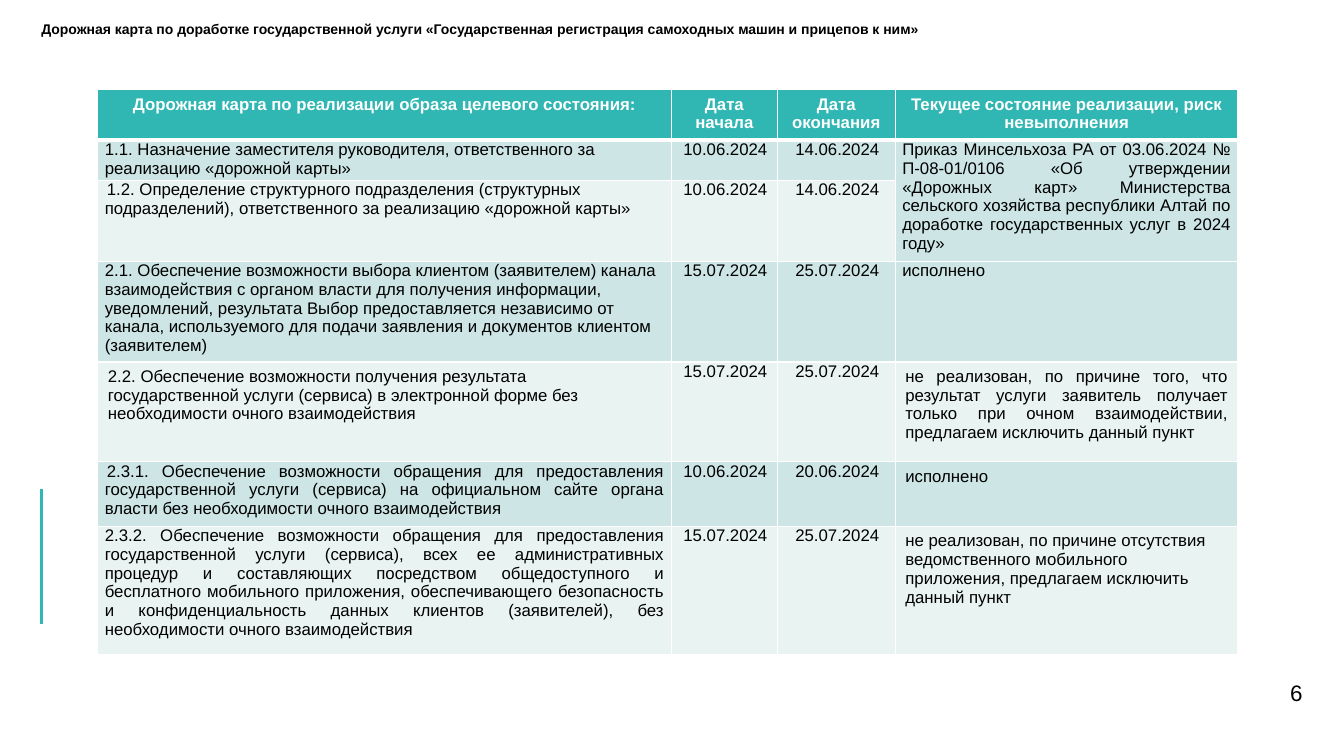
from dataclasses import dataclass

from lxml.etree import SubElement
from pptx import Presentation
from pptx.dml.color import RGBColor
from pptx.enum.shapes import MSO_CONNECTOR
from pptx.enum.text import MSO_ANCHOR, MSO_AUTO_SIZE, PP_ALIGN
from pptx.oxml.ns import qn
from pptx.table import Table, _Cell
from pptx.text.text import TextFrame, _Paragraph
from pptx.util import Inches, Pt

TEAL = RGBColor(0x30, 0xB6, 0xB3)
BAND_DARK = RGBColor(0xCD, 0xE5, 0xE5)
BAND_LIGHT = RGBColor(0xE8, 0xF3, 0xF2)
WHITE = RGBColor(0xFF, 0xFF, 0xFF)
BLACK = RGBColor(0x00, 0x00, 0x00)
FONT = "Arial"

LEFT, CENTER, JUSTIFY = PP_ALIGN.LEFT, PP_ALIGN.CENTER, PP_ALIGN.JUSTIFY
COLUMN_WIDTHS = (5.69, 1.05, 1.17, 3.4)
ROW_HEIGHTS = (0.48, 0.37, 0.74, 0.93, 0.99, 0.64, 1.27)


@dataclass(frozen=True)
class Entry:
    text: str
    align: PP_ALIGN = LEFT
    tight: bool = True  # narrow side margins, none above and below
    indent: float = 0


@dataclass(frozen=True)
class Step:
    task: Entry
    start: str
    finish: str
    status: Entry

    def entries(self) -> list[Entry]:
        dates = [Entry(day, CENTER, indent=0.02) for day in (self.start, self.finish)]
        return [self.task, *dates, self.status]


HEADINGS = [
    Entry(text, CENTER, tight=False)
    for text in (
        "Дорожная карта по реализации образа целевого состояния:",
        "Дата\nначала",
        "Дата окончания",
        "Текущее состояние реализации, риск невыполнения",
    )
]

STEPS = [
    Step(
        Entry("1.1. Назначение заместителя руководителя, ответственного за "
              "реализацию «дорожной карты»"),
        "10.06.2024", "14.06.2024",
        Entry("Приказ Минсельхоза РА от 03.06.2024 № П-08-01/0106 «Об утверждении "
              "«Дорожных карт» Министерства сельского хозяйства республики Алтай "
              "по доработке государственных услуг в 2024 году»", JUSTIFY),
    ),
    Step(
        Entry("1.2. Определение структурного подразделения (структурных "
              "подразделений), ответственного за реализацию «дорожной карты»",
              indent=0.02),
        "10.06.2024", "14.06.2024",
        Entry(""),  # covered by the merged order text above
    ),
    Step(
        Entry("2.1. Обеспечение возможности выбора клиентом (заявителем) канала "
              "взаимодействия с органом власти для получения информации, "
              "уведомлений, результата Выбор предоставляется независимо от канала, "
              "используемого для подачи заявления и документов клиентом (заявителем)"),
        "15.07.2024", "25.07.2024",
        Entry("исполнено", JUSTIFY),
    ),
    Step(
        Entry("2.2. Обеспечение возможности получения результата государственной "
              "услуги (сервиса) в электронной форме без необходимости очного "
              "взаимодействия", tight=False),
        "15.07.2024", "25.07.2024",
        Entry("не реализован, по причине того, что результат услуги заявитель "
              "получает только при очном взаимодействии, предлагаем исключить "
              "данный пункт", JUSTIFY, tight=False),
    ),
    Step(
        Entry("2.3.1. Обеспечение возможности обращения для предоставления "
              "государственной услуги (сервиса) на официальном сайте органа власти "
              "без необходимости очного взаимодействия", JUSTIFY, indent=0.02),
        "10.06.2024", "20.06.2024",
        Entry("исполнено", JUSTIFY, tight=False),
    ),
    Step(
        Entry("2.3.2. Обеспечение возможности обращения для предоставления "
              "государственной услуги (сервиса), всех ее административных процедур "
              "и составляющих посредством общедоступного и бесплатного мобильного "
              "приложения, обеспечивающего безопасность и конфиденциальность данных "
              "клиентов (заявителей), без необходимости очного взаимодействия",
              JUSTIFY),
        "15.07.2024", "25.07.2024",
        Entry("не реализован, по причине отсутствия ведомственного мобильного "
              "приложения, предлагаем исключить данный пункт", tight=False),
    ),
]


def add_run(paragraph: _Paragraph, text: str, size: float, color: RGBColor,
            bold: bool = False) -> None:
    run = paragraph.add_run()
    run.text = text
    run.font.name = FONT
    run.font.size = Pt(size)
    run.font.bold = bold
    run.font.color.rgb = color


def clear_margins(frame: TextFrame) -> None:
    frame.margin_left = frame.margin_right = 0
    frame.margin_top = frame.margin_bottom = 0


def set_border(cell: _Cell, side: str, points: float) -> None:
    properties = cell._tc.get_or_add_tcPr()
    line = SubElement(properties, qn(f"a:ln{side}"), w=str(Pt(points)))
    fill = SubElement(line, qn("a:solidFill"))
    SubElement(fill, qn("a:srgbClr"), val=str(WHITE))


def fill_cell(cell: _Cell, entry: Entry, row: int) -> None:
    heading = row == 0
    for side in "LRTB":
        under_heading = (heading and side == "B") or (row == 1 and side == "T")
        set_border(cell, side, 3 if under_heading else 1)
    cell.fill.solid()
    cell.fill.fore_color.rgb = TEAL if heading else BAND_DARK if row % 2 else BAND_LIGHT
    if entry.tight:
        cell.margin_left = cell.margin_right = Inches(0.07)
        cell.margin_top = cell.margin_bottom = 0
    if not entry.text:
        return
    for index, line in enumerate(entry.text.split("\n")):
        frame = cell.text_frame
        paragraph = frame.add_paragraph() if index else frame.paragraphs[0]
        paragraph.alignment = entry.align
        if entry.indent:
            paragraph._p.get_or_add_pPr().set("indent", str(Inches(entry.indent)))
        add_run(paragraph, line, 12, WHITE if heading else BLACK, heading)


def fill_roadmap(roadmap: Table) -> None:
    for column, width in zip(roadmap.columns, COLUMN_WIDTHS):
        column.width = Inches(width)
    for row, height in zip(roadmap.rows, ROW_HEIGHTS):
        row.height = Inches(height)
    rows = [HEADINGS, *(step.entries() for step in STEPS)]
    for row_index, entries in enumerate(rows):
        for column_index, entry in enumerate(entries):
            fill_cell(roadmap.cell(row_index, column_index), entry, row_index)
    roadmap.cell(1, 3).merge(roadmap.cell(2, 3))


def main() -> None:
    deck = Presentation()
    deck.slide_width, deck.slide_height = Inches(13.33), Inches(7.5)
    slide = deck.slides.add_slide(deck.slide_layouts[5])

    # Title
    title = slide.shapes.title
    title.left, title.top = Inches(0.41), Inches(0.22)
    title.width, title.height = Inches(11.05), Inches(0.39)
    heading = title.text_frame
    clear_margins(heading)
    heading.word_wrap = True
    heading.auto_size = MSO_AUTO_SIZE.NONE
    heading.vertical_anchor = MSO_ANCHOR.TOP
    heading.paragraphs[0].alignment = LEFT
    heading.paragraphs[0].line_spacing = 0.9
    add_run(heading.paragraphs[0],
            "Дорожная карта по доработке государственной услуги «Государственная "
            "регистрация самоходных машин и прицепов к ним»", 10, BLACK, True)

    # Page number
    number = slide.shapes.add_textbox(
        Inches(11.86), Inches(6.66), Inches(1.06), Inches(0.43)).text_frame
    clear_margins(number)
    number.word_wrap = True
    number.vertical_anchor = MSO_ANCHOR.MIDDLE
    number.paragraphs[0].alignment = PP_ALIGN.RIGHT
    add_run(number.paragraphs[0], "6", 16, BLACK)

    # Accent line at the left edge
    accent = slide.shapes.add_connector(
        MSO_CONNECTOR.STRAIGHT, Inches(0.41), Inches(4.85), Inches(0.41), Inches(6.19))
    accent.line.color.rgb = TEAL
    accent.line.width = Pt(2.25)
    SubElement(accent._element.spPr, qn("a:effectLst"))

    # Roadmap table
    fill_roadmap(slide.shapes.add_table(
        len(ROW_HEIGHTS), len(COLUMN_WIDTHS), Inches(0.97), Inches(0.89),
        Inches(sum(COLUMN_WIDTHS)), Inches(sum(ROW_HEIGHTS))).table)

    deck.save("out.pptx")


if __name__ == "__main__":
    main()
